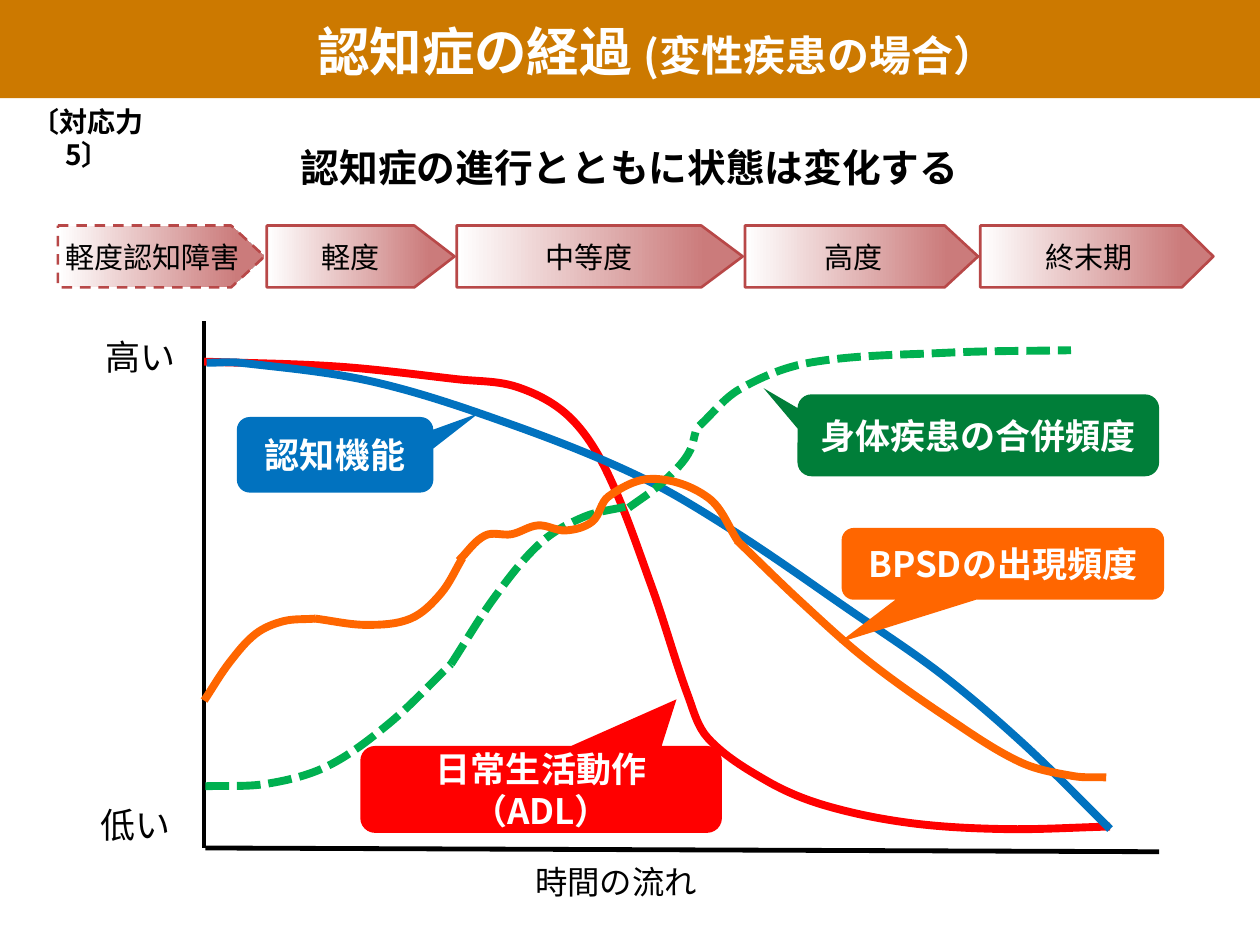
import dataclasses
import pptx
import pptx.util
import pptx.dml.color
import pptx.enum.dml
import pptx.enum.shapes
import pptx.enum.text
import pptx.oxml
import pptx.oxml.ns

Inches, Pt, qn = pptx.util.Inches, pptx.util.Pt, pptx.oxml.ns.qn
SHAPE = pptx.enum.shapes.MSO_SHAPE
DASH = pptx.enum.dml.MSO_LINE
ANCHOR = pptx.enum.text.MSO_ANCHOR
NS = pptx.oxml.ns.nsdecls("a")
FONT = "Noto Sans CJK JP"
COLORS = {"band": "CC7900", "black": "000000", "white": "FFFFFF", "stage": "CB7B7B",
          "stage_line": "B84848", "adl": "FF0000", "cognition": "0172BF",
          "illness": "007E39", "illness_curve": "00B050", "bpsd": "FF6600"}


@dataclasses.dataclass
class Stage:
    """One arrow of the stage row."""
    text: str
    width: float
    tip: float
    dash: object = None


@dataclasses.dataclass
class Series:
    """A named course: its callout, the point it names and the knots of each curve piece."""
    text: str
    box: tuple
    target: tuple
    color: str
    curve_color: str
    pieces: list
    dash: object = None
    callout_in_front: bool = False


STAGES = [Stage("軽度認知障害", 1.64, 0.54, DASH.DASH), Stage("軽度", 1.49, 0.65),
          Stage("中等度", 2.27, 0.67), Stage("高度", 1.85, 0.54), Stage("終末期", 1.85, 0.51)]

SERIES = [
    Series("日常生活動作（ADL）", (2.36, 3.42, 2.87, 0.69), (4.87, 3.05), "adl", "adl",
           [[(1.12, 0.37), (2.19, 0.41), (3.13, 0.51), (3.6, 0.57), (4.01, 0.8), (4.31, 1.23),
             (4.67, 2.15), (4.96, 3.02), (5.12, 3.36), (5.59, 3.7), (6.04, 3.89), (6.71, 4.03),
             (7.47, 4.08), (8.31, 4.06)]],
           callout_in_front=True),
    Series("認知機能", (1.38, 0.81, 1.56, 0.6), (3.3, 0.78), "cognition", "cognition",
           [[(1.14, 0.38), (1.41, 0.38), (2.46, 0.53), (3.56, 0.87), (4.59, 1.29), (5.33, 1.72),
             (6.24, 2.34), (6.97, 2.85), (7.64, 3.42), (8.31, 4.08)]]),
    Series("身体疾患の合併頻度", (5.83, 0.63, 2.87, 0.65), (5.56, 0.58), "illness", "illness_curve",
           [[(1.13, 3.74), (1.62, 3.72), (2.1, 3.58), (2.59, 3.24), (3.08, 2.77)],
            [(3.08, 2.77), (3.44, 2.22), (3.8, 1.8), (4.14, 1.6), (4.47, 1.52)],
            [(4.49, 1.53), (4.71, 1.37), (4.89, 1.2), (4.98, 1.07), (5.02, 0.93)],
            [(5.05, 0.88), (5.37, 0.59), (5.92, 0.38), (7.02, 0.3), (8, 0.28)]],
           dash=DASH.SQUARE_DOT),
    Series("BPSDの出現頻度", (6.18, 1.69, 2.56, 0.57), (6.16, 2.6), "bpsd", "bpsd",
           [[(1.12, 3.06), (1.32, 2.76), (1.53, 2.53), (1.75, 2.43), (2, 2.41)],
            [(2, 2.41), (2.41, 2.46), (2.76, 2.41), (3, 2.21), (3.17, 1.93)],
            [(5.35, 1.79), (5.85, 2.27), (6.37, 2.73), (7.01, 3.19), (7.6, 3.55), (8.02, 3.66),
             (8.28, 3.67)],
            [(3.14, 1.95), (3.35, 1.75), (3.56, 1.74), (3.77, 1.67), (3.99, 1.71), (4.2, 1.64),
             (4.33, 1.44), (4.68, 1.3), (5.12, 1.45), (5.36, 1.8)]]),
]


def rgb(name):
    """Return the named colour."""
    return pptx.dml.color.RGBColor.from_string(COLORS[name])


def set_line(sp, color, width, dash=None):
    """Format an outline or connector."""
    sp.line.color.rgb, sp.line.width = rgb(color), Pt(width)
    if dash:
        sp.line.dash_style = dash


def write(sp, text, size, color="black", bold=False, anchor=ANCHOR.MIDDLE, wrap=True):
    """Write one centred paragraph and return it."""
    tf = sp.text_frame
    tf.word_wrap, tf.vertical_anchor = wrap, anchor
    p = tf.paragraphs[0]
    p.add_run().text = text
    p.alignment = pptx.enum.text.PP_ALIGN.CENTER
    p.font.name, p.font.size, p.font.bold = FONT, Pt(size), bold
    p.font.color.rgb = rgb(color)
    latin = next(p._p.iter(qn("a:latin")))
    latin.addnext(pptx.oxml.parse_xml(f'<a:ea {NS} typeface="{FONT}"/>'))
    return p


def add_label(shapes, box, text, size, **style):
    """Add a text box."""
    write(shapes.add_textbox(*map(Inches, box)), text, size, **style)


def add_preset(shapes, kind, box, adjustments=(), fill=None):
    """Add a preset shape without shadow or outline."""
    sp = shapes.add_shape(kind, *map(Inches, box))
    sp.shadow.inherit = False
    sp.line.fill.background()
    for i, value in enumerate(adjustments):
        sp.adjustments[i] = value
    if fill:
        sp.fill.solid()
        sp.fill.fore_color.rgb = rgb(fill)
    return sp


def add_header(s, box):
    """Place the band and the slide title on it."""
    x, y, w, h = box
    band = add_preset(s.shapes, SHAPE.RECTANGLE, box, fill="band")
    title = s.shapes.title
    title._element.addprevious(band._element)
    title.left, title.top, title.width, title.height = map(Inches, (x + 1.78, y + 0.1, 6.86, 0.6))
    p = write(title, "認知症の経過 ", 30, "white", True)
    r = p.add_run()
    r.text, r.font.size = "(変性疾患の場合）", Pt(24)


def add_stages(s, box):
    """Place the stage arrows in a row with equal gaps."""
    x, y, w, h = box
    shapes = s.shapes.add_group_shape().shapes
    gap = (w - sum(stage.width for stage in STAGES)) / (len(STAGES) - 1)
    for stage in STAGES:
        sp = add_preset(shapes, SHAPE.PENTAGON, (x, y, stage.width, h), [stage.tip])
        sp.fill.gradient()
        sp.fill.gradient_angle = 0
        for stop, color, position in zip(sp.fill.gradient_stops, ("white", "stage"), (0, 0.87)):
            stop.color.rgb, stop.position = rgb(color), position
        set_line(sp, "stage_line", 1.5, stage.dash)
        write(sp, stage.text, 16.6, wrap=False)
        x += stage.width + gap


def smooth(knots):
    """Yield two handles and an end for each gap; a handle follows the chord between neighbours."""
    pts = [complex(*knot) for knot in knots]
    chords = [b - a for a, b in zip([pts[0]] + pts, pts[1:] + [pts[-1]])]
    directions = [chord / abs(chord) for chord in chords]
    for i, (a, b) in enumerate(zip(pts, pts[1:])):
        reach = abs(b - a) / 3
        yield from (a + reach * directions[i], b - reach * directions[i + 1], b)


def add_curve(shapes, origin, knots, color, dash):
    """Draw a smooth open curve through the knots."""
    x, y = origin
    fb = shapes.build_freeform(Inches(x + knots[0][0]), Inches(y + knots[0][1]))
    fb.add_line_segments([(Inches(x + pt.real), Inches(y + pt.imag)) for pt in smooth(knots)],
                         close=False)
    sp = fb.convert_to_shape()
    sp.shadow.inherit = False
    sp.fill.background()
    set_line(sp, color, 4.5, dash)
    lines = list(sp._element.iter(qn("a:lnTo")))
    for i in range(0, len(lines), 3):
        cubic = pptx.oxml.parse_xml(f"<a:cubicBezTo {NS}/>")
        lines[i].addprevious(cubic)
        for line in lines[i:i + 3]:
            cubic.extend(list(line))
            line.getparent().remove(line)


def add_callout(shapes, origin, series):
    """Add the callout of a series with its tail on the target."""
    x, y, w, h = series.box
    tail = ((series.target[0] - x) / w - 0.5, (series.target[1] - y) / h - 0.5)
    sp = add_preset(shapes, SHAPE.ROUNDED_RECTANGULAR_CALLOUT,
                    (origin[0] + x, origin[1] + y, w, h), (*tail, 0.17), series.color)
    write(sp, series.text, 20, "white", True)


def add_series(s, origin, series):
    """Group the callout and the curve pieces of one series."""
    shapes = s.shapes.add_group_shape().shapes
    if not series.callout_in_front:
        add_callout(shapes, origin, series)
    for knots in series.pieces:
        add_curve(shapes, origin, knots, series.curve_color, series.dash)
    if series.callout_in_front:
        add_callout(shapes, origin, series)


def add_graph(s, origin):
    """Place the axes, their labels and all series."""
    x, y = origin
    for x1, y1, x2, y2 in ((1.13, 4.23, 8.7, 4.26), (1.12, 0.05, 1.12, 4.23)):
        axis = s.shapes.add_connector(pptx.enum.shapes.MSO_CONNECTOR.STRAIGHT,
                                      Inches(x + x1), Inches(y + y1), Inches(x + x2), Inches(y + y2))
        set_line(axis, "black", 2.75)
        axis._element.spPr.append(pptx.oxml.parse_xml(f"<a:effectLst {NS}/>"))
    for text, size, dx, dy, w, h in (("時間の流れ", 18.5, 3.36, 4.29, 2.06, 0.41),
                                     ("高い", 20, 0.09, 0.11, 1.05, 0.44),
                                     ("低い", 20, 0.05, 3.83, 1.05, 0.44)):
        add_label(s.shapes, (x + dx, y + dy, w, h), text, size, anchor=ANCHOR.TOP)
    for series in SERIES:
        add_series(s, origin, series)


def main():
    """Build the slide and save it."""
    prs = pptx.Presentation()
    prs.slide_width, prs.slide_height = Inches(10), Inches(7.5)
    s = prs.slides.add_slide(prs.slide_layouts[5])
    add_header(s, (0, 0, 10, 0.78))
    add_stages(s, (0.46, 1.79, 9.17, 0.49))
    add_graph(s, (0.5, 2.5))
    add_label(s.shapes, (0.17, 1.03, 9.65, 0.6), "認知症の進行とともに状態は変化する", 22.1, bold=True)
    add_label(s.shapes, (0, 0.78, 1.39, 0.37), "〔対応力5〕", 16, bold=True, anchor=ANCHOR.TOP)
    prs.save("out.pptx")


if __name__ == "__main__":
    main()
